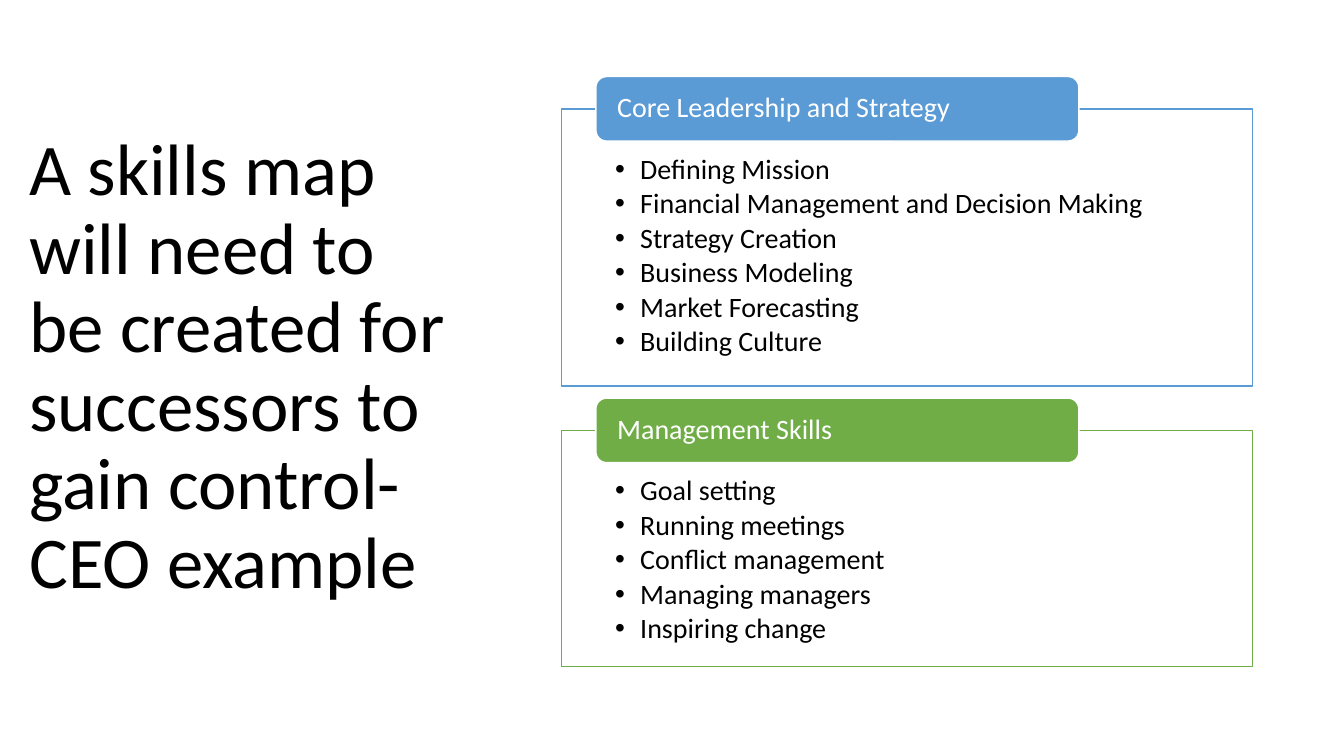
from lxml.etree import SubElement as Sub
from pptx import Presentation as Deck
from pptx.dml.color import RGBColor as Rgb
from pptx.enum.shapes import MSO_SHAPE as Kind
from pptx.enum.text import MSO_ANCHOR as Anchor, MSO_AUTO_SIZE as Fit, PP_ALIGN as Align
from pptx.oxml.ns import qn
from pptx.util import Inches, Pt

LEFT, WIDTH = 5.57, 6.85
PANELS = [
    (1.08, 2.75, "5B9BD5", "Core Leadership and Strategy",
     ["Defining Mission", "Financial Management and Decision Making",
      "Strategy Creation", "Business Modeling", "Market Forecasting",
      "Building Culture"]),
    (4.27, 2.34, "70AD47", "Management Skills",
     ["Goal setting", "Running meetings", "Conflict management",
      "Managing managers", "Inspiring change"]),
]


def paint(target, color):
    """Give a fill or a font a solid colour."""
    if hasattr(target, "solid"):
        target.solid()
        target.fore_color.rgb = Rgb.from_string(color)
    else:
        target.color.rgb = Rgb.from_string(color)


def style(par, size, color):
    """Format one left-aligned paragraph."""
    par.alignment = Align.LEFT
    par.line_spacing = 0.9
    par.font.name = "Calibri"
    par.font.size = Pt(size)
    paint(par.font, color)


def add_box(slide, kind, place, fill, line, pads):
    """Add a filled, outlined shape and return its text frame."""
    box = slide.shapes.add_shape(kind, *map(Inches, place))
    box.shadow.inherit = False
    paint(box.fill, fill)
    paint(box.line.fill, line)
    box.line.width = Pt(1)
    frame = box.text_frame
    frame.word_wrap = True
    (frame.margin_left, frame.margin_top,
     frame.margin_right, frame.margin_bottom) = map(Inches, pads)
    return frame


def add_list(frame, items):
    """Fill a text frame with bulleted items."""
    frame.vertical_anchor = Anchor.TOP
    for num, item in enumerate(items):
        par = frame.add_paragraph() if num else frame.paragraphs[0]
        par.text = item
        style(par, 20, "000000")
        par.space_after = Pt(3)
        props = par._p.get_or_add_pPr()
        props.set("marL", str(Inches(0.25)))
        props.set("indent", str(-Inches(0.25)))
        Sub(props, qn("a:buFont"), typeface="Arial")
        Sub(props, qn("a:buChar"), char="•")


def add_panel(slide, top, height, color, head, items):
    """Add an outlined list with a coloured tab over its top edge."""
    body = add_box(slide, Kind.RECTANGLE, (LEFT, top, WIDTH, height),
                   "FFFFFF", color, (0.53, 0.46, 0.53, 0.16))
    add_list(body, items)
    tab = add_box(slide, Kind.ROUNDED_RECTANGLE,
                  (LEFT + 0.34, top - 0.32, 4.79, 0.64),
                  color, "FFFFFF", (0.18, 0, 0.18, 0))
    tab.vertical_anchor = Anchor.MIDDLE
    tab.text = head
    style(tab.paragraphs[0], 20, "FFFFFF")


def set_title(slide, text):
    """Place and format the title."""
    title = slide.shapes.title
    title.left, title.top, title.width, title.height = map(
        Inches, (0.19, 0.61, 4.42, 6.09))
    frame = title.text_frame
    frame.text = text
    frame.word_wrap = True
    frame.auto_size = Fit.NONE
    frame.vertical_anchor = Anchor.MIDDLE
    style(frame.paragraphs[0], 52, "000000")


def main():
    """Build and save the slide."""
    deck = Deck()
    deck.slide_width, deck.slide_height = Inches(13.33), Inches(7.5)
    slide = deck.slides.add_slide(deck.slide_layouts[5])
    set_title(slide, "A skills map will need to be created for "
                     "successors to gain control-CEO example")
    for panel in PANELS:
        add_panel(slide, *panel)
    deck.save("out.pptx")


if __name__ == "__main__":
    main()
